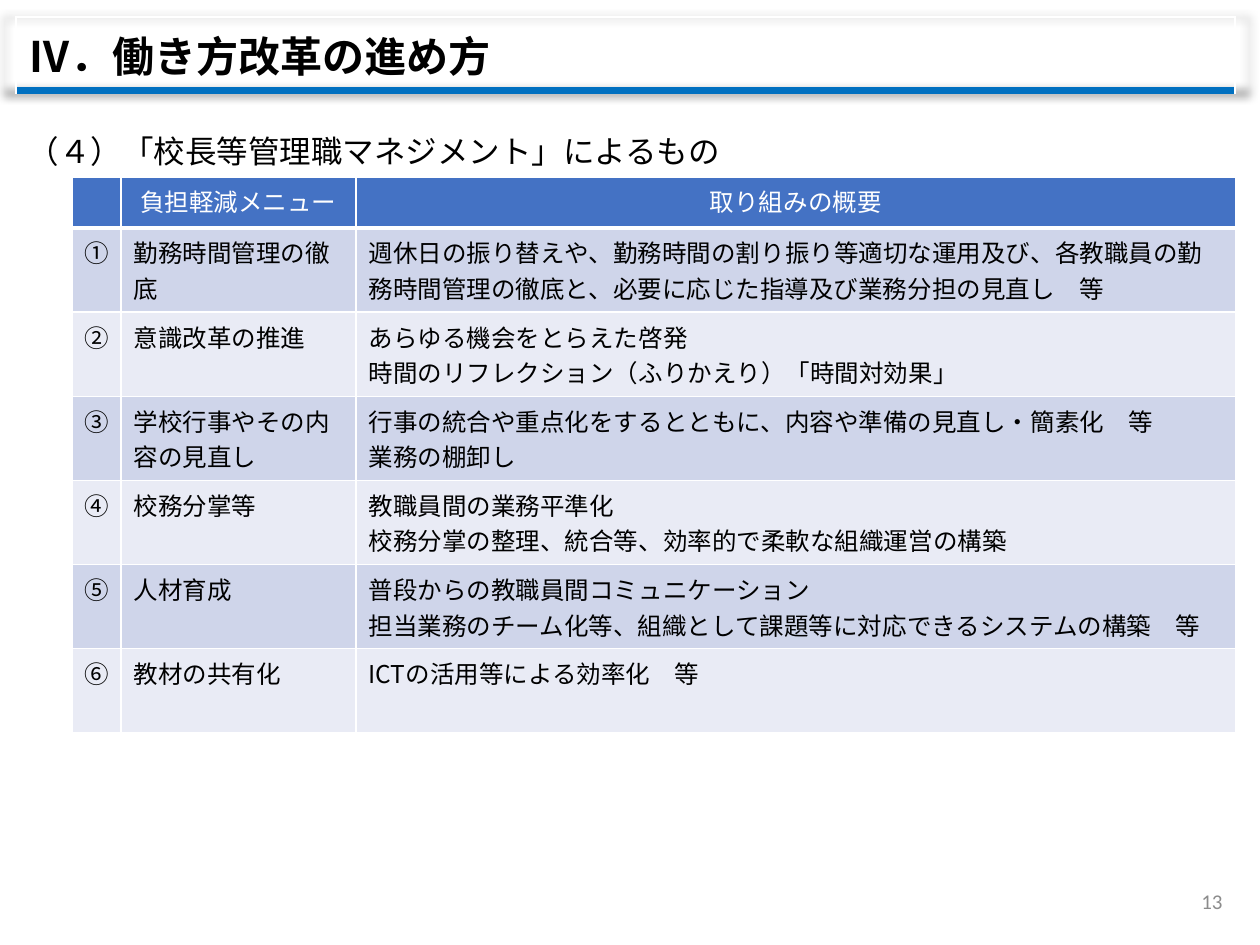
from dataclasses import dataclass

from lxml.etree import SubElement
from pptx import Presentation
from pptx.dml.color import RGBColor
from pptx.enum.text import MSO_ANCHOR, MSO_AUTO_SIZE, PP_ALIGN
from pptx.oxml.ns import qn
from pptx.util import Emu, Pt

EMU_PER_PX = 914400 / 126


@dataclass(frozen=True)
class Theme:
    japanese_font: str = "Noto Sans CJK JP"
    number_font: str = "Calibri"
    black: str = "000000"
    white: str = "FFFFFF"
    gray: str = "8C8C8C"
    accent: str = "0070C0"
    header: str = "4472C4"
    bands: tuple[str, str] = ("CFD5EA", "E9EBF5")
    heading_size: int = 24
    subheading_size: int = 18
    table_size: int = 14
    number_size: int = 12


@dataclass(frozen=True)
class Box:
    left: int
    top: int
    width: int
    height: int

    def emu(self) -> tuple[Emu, ...]:
        return tuple(px(n) for n in (self.left, self.top, self.width, self.height))


@dataclass(frozen=True)
class TextStyle:
    size: int
    color: str
    font: str
    bold: bool = False
    alignment: PP_ALIGN = PP_ALIGN.LEFT


@dataclass(frozen=True)
class Measure:
    number: str
    menu: str
    summary: tuple[str, ...]


THEME = Theme()
HEADING = TextStyle(THEME.heading_size, THEME.black, THEME.japanese_font, bold=True)
SUBHEADING = TextStyle(THEME.subheading_size, THEME.black, THEME.japanese_font)
HEADER = TextStyle(THEME.table_size, THEME.white, THEME.japanese_font, alignment=PP_ALIGN.CENTER)
BODY = TextStyle(THEME.table_size, THEME.black, THEME.japanese_font)
PAGE_NUMBER = TextStyle(THEME.number_size, THEME.gray, THEME.number_font, alignment=PP_ALIGN.RIGHT)

COLUMN_WIDTHS = (49, 235, 880)
HEADER_HEIGHT, ROW_HEIGHT = 47, 84
COLUMN_TITLES = ("", "負担軽減メニュー", "取り組みの概要")
MEASURES = (
    Measure("①", "勤務時間管理の徹底", (
        "週休日の振り替えや、勤務時間の割り振り等適切な運用及び、各教職員の勤務時間管理の徹底と、"
        "必要に応じた指導及び業務分担の見直し　等",)),
    Measure("②", "意識改革の推進", (
        "あらゆる機会をとらえた啓発",
        "時間のリフレクション（ふりかえり）「時間対効果」")),
    Measure("③", "学校行事やその内容の見直し", (
        "行事の統合や重点化をするとともに、内容や準備の見直し・簡素化　等",
        "業務の棚卸し")),
    Measure("④", "校務分掌等", (
        "教職員間の業務平準化",
        "校務分掌の整理、統合等、効率的で柔軟な組織運営の構築")),
    Measure("⑤", "人材育成", (
        "普段からの教職員間コミュニケーション",
        "担当業務のチーム化等、組織として課題等に対応できるシステムの構築　等")),
    Measure("⑥", "教材の共有化", ("ICTの活用等による効率化　等",)),
)


def px(length: int) -> Emu:
    return Emu(round(length * EMU_PER_PX))


def write(text_frame, lines: tuple[str, ...], style: TextStyle) -> None:
    for index, line in enumerate(lines):
        paragraph = text_frame.add_paragraph() if index else text_frame.paragraphs[0]
        paragraph.alignment = style.alignment
        run = paragraph.add_run()
        run.text = line
        run.font.size = Pt(style.size)
        run.font.bold = style.bold
        run.font.name = style.font
        run.font.color.rgb = RGBColor.from_string(style.color)
        SubElement(run.font._element, qn("a:ea"), typeface=style.font)


def set_borders(cell, bottom_color: str = THEME.white, bottom_width: float = 1) -> None:
    """Draw thin white sides and the given bottom line; call before filling."""
    properties = cell._tc.get_or_add_tcPr()
    for side in "LRTB":
        color, width = (bottom_color, bottom_width) if side == "B" else (THEME.white, 1)
        line = SubElement(properties, qn(f"a:ln{side}"), w=str(Pt(width)))
        SubElement(SubElement(line, qn("a:solidFill")), qn("a:srgbClr"), val=color)


def add_plain_table(slide, box: Box, rows: int, columns: int):
    table = slide.shapes.add_table(rows, columns, *box.emu()).table
    table.first_row = table.horz_banding = False
    return table


def add_soft_shadow(table) -> None:
    effects = SubElement(table._tbl.tblPr, qn("a:effectLst"))
    table._tbl.tblPr.insert(0, effects)
    shadow = SubElement(effects, qn("a:outerShdw"), blurRad=str(Pt(5)),
                        sx="102000", sy="102000", algn="ctr", rotWithShape="0")
    color = SubElement(shadow, qn("a:srgbClr"), val=THEME.black)
    SubElement(color, qn("a:alpha"), val="40000")


def add_heading(slide, box: Box, text: str) -> None:
    table = add_plain_table(slide, box, 1, 1)
    add_soft_shadow(table)
    cell = table.cell(0, 0)
    set_borders(cell, THEME.accent, 4.5)
    cell.fill.background()
    cell.vertical_anchor = MSO_ANCHOR.MIDDLE
    write(cell.text_frame, (text,), HEADING)


def fill_cell(cell, lines: tuple[str, ...], style: TextStyle, color: str, bottom_width: int) -> None:
    set_borders(cell, bottom_width=bottom_width)
    cell.fill.solid()
    cell.fill.fore_color.rgb = RGBColor.from_string(color)
    if any(lines):
        write(cell.text_frame, lines, style)


def add_measures(slide, left: int, top: int) -> None:
    height = HEADER_HEIGHT + ROW_HEIGHT * len(MEASURES)
    box = Box(left, top, sum(COLUMN_WIDTHS), height)
    table = add_plain_table(slide, box, len(MEASURES) + 1, len(COLUMN_WIDTHS))
    for column, width in zip(table.columns, COLUMN_WIDTHS):
        column.width = px(width)
    for index, row in enumerate(table.rows):
        row.height = px(ROW_HEIGHT if index else HEADER_HEIGHT)
    for column, title in enumerate(COLUMN_TITLES):
        fill_cell(table.cell(0, column), (title,), HEADER, THEME.header, 3)
    for row, measure in enumerate(MEASURES, start=1):
        band = THEME.bands[(row - 1) % 2]
        for column, lines in enumerate(((measure.number,), (measure.menu,), measure.summary)):
            fill_cell(table.cell(row, column), lines, BODY, band, 1)


def place_text(shape, box: Box, text: str, style: TextStyle, anchor: MSO_ANCHOR) -> None:
    shape.left, shape.top, shape.width, shape.height = box.emu()
    frame = shape.text_frame
    frame.word_wrap = True
    frame.auto_size = MSO_AUTO_SIZE.NONE
    frame.vertical_anchor = anchor
    write(frame, (text,), style)


def main() -> None:
    presentation = Presentation()
    presentation.slide_width, presentation.slide_height = px(1260), px(945)
    slide = presentation.slides.add_slide(presentation.slide_layouts[5])

    add_heading(slide, Box(16, 17, 1219, 73), "Ⅳ．働き方改革の進め方")
    add_measures(slide, 72, 177)
    place_text(slide.shapes.title, Box(15, 126, 1221, 50),
               "（４）「校長等管理職マネジメント」によるもの", SUBHEADING, MSO_ANCHOR.TOP)
    number_box = Box(951, 876, 284, 50)
    place_text(slide.shapes.add_textbox(*number_box.emu()), number_box,
               "13", PAGE_NUMBER, MSO_ANCHOR.MIDDLE)
    presentation.save("out.pptx")


if __name__ == "__main__":
    main()
